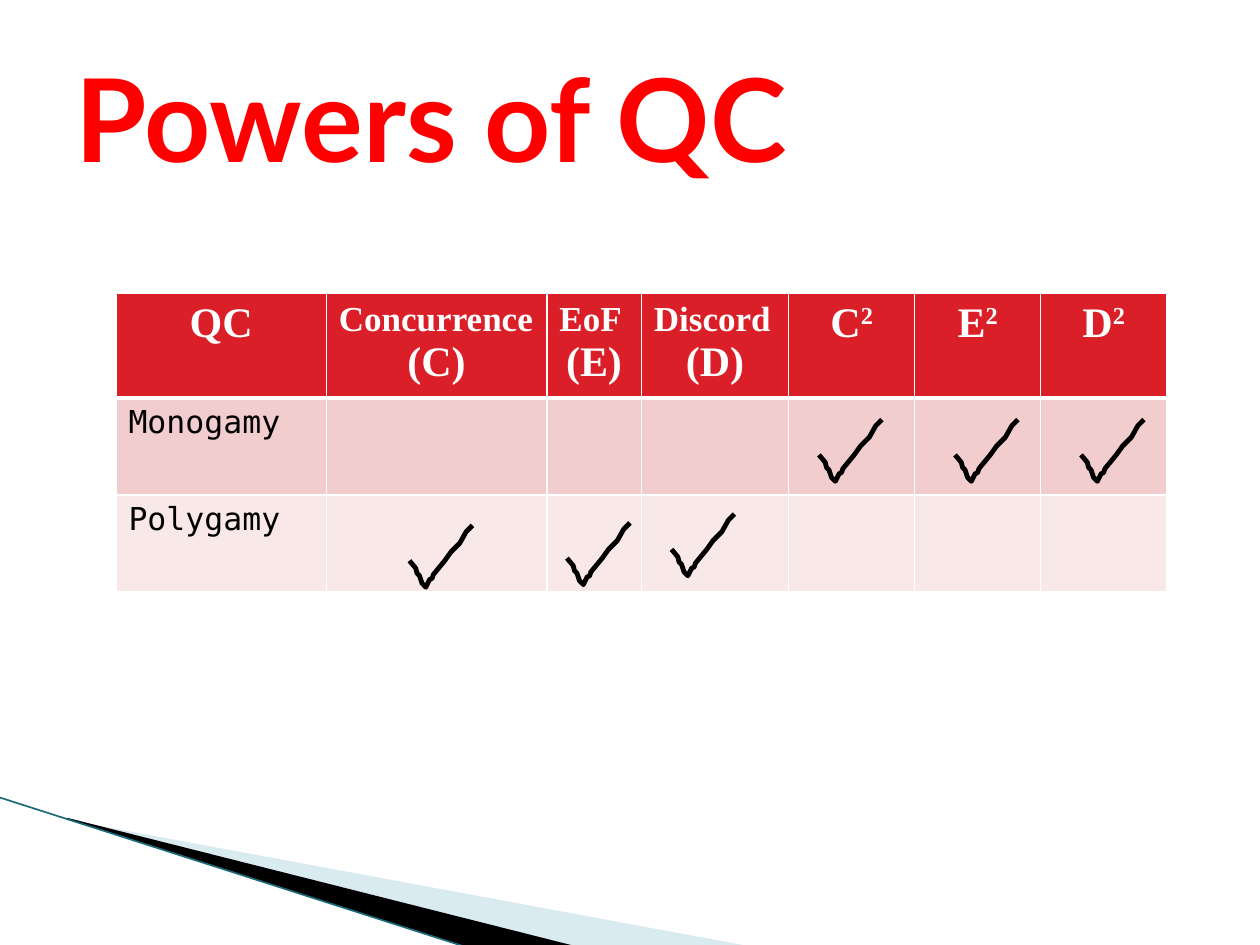
from typing import NamedTuple

from lxml.etree import SubElement
from pptx import Presentation
from pptx.dml.color import RGBColor
from pptx.enum.shapes import MSO_CONNECTOR
from pptx.enum.text import MSO_ANCHOR, MSO_AUTO_SIZE, PP_ALIGN
from pptx.oxml.ns import qn
from pptx.util import Pt

PX = 9144  # 100 px to the inch
COLORS = {
    "title": "FF0000", "header": "DA1F28", "band1": "F1CDCD", "band2": "F8E8E8",
    "white": "FFFFFF", "black": "000000", "pale": "A0CBDC", "teal": "1B6A7A",
}
SERIF, MONO = "Times New Roman", "DejaVu Sans Mono"


class Wedge(NamedTuple):
    points: list[tuple[int, int]]
    color: str
    alpha: int


class Line(NamedTuple):
    text: str
    size: int = 24
    align: PP_ALIGN = PP_ALIGN.CENTER
    power: str = ""


WEDGES = [
    Wedge([(55, 651), (595, 751), (456, 751), (55, 650)], "pale", 40),
    Wedge([(53, 649), (457, 751), (372, 752), (54, 650)], "black", 100),
]
COLUMNS = [167, 175, 75, 117, 100, 100, 100]
ROWS = [83, 77, 77]
HEADERS = [
    [Line("QC")],
    *([Line(name, 20, PP_ALIGN.LEFT), Line(f"({letter})")]
      for name, letter in [("Concurrence", "C"), ("EoF", "E"), ("Discord", "D")]),
    *([Line(letter, power="2")] for letter in "CED"),
]
PROPERTIES = [("Monogamy", "band1"), ("Polygamy", "band2")]
CHECK = [
    (0, 28), (5, 34), (6, 38), (8, 40), (10, 46), (13, 49), (15, 45), (16, 43),
    (18, 42), (19, 39), (28, 28), (33, 21), (40, 14), (45, 5), (50, 0),
]
CHECK_SPOTS = [(325, 417), (450, 415), (533, 408), (650, 333), (758, 333), (858, 333)]


def rgb(name: str) -> RGBColor:
    return RGBColor.from_string(COLORS[name])


def add_text(p, text: str, *, size: int, font: str, color: str,
             bold: bool = False, raised: bool = False) -> None:
    r = p.add_run()
    r.text = text
    r.font.size, r.font.name, r.font.bold = Pt(size), font, bold
    r.font.color.rgb = rgb(color)
    if raised:
        r.font._element.set("baseline", "30000")


def add_outline(s, points: list[tuple[int, int]], close: bool):
    builder = s.shapes.build_freeform(*points[0], scale=PX)
    builder.add_line_segments(points[1:], close=close)
    sp = builder.convert_to_shape()
    sp.shadow.inherit = False
    return sp


def add_wedge(s, wedge: Wedge) -> None:
    sp = add_outline(s, wedge.points, True)
    sp.fill.solid()
    sp.fill.fore_color.rgb = rgb(wedge.color)
    sp.line.fill.background()
    if wedge.alpha < 100:
        color = sp._element.spPr.find(f".//{qn('a:srgbClr')}")
        SubElement(color, qn("a:alpha"), val=str(wedge.alpha * 1000))


def add_check(s, left: int, top: int) -> None:
    sp = add_outline(s, [(left + x, top + y) for x, y in CHECK], False)
    sp.fill.background()
    sp.line.color.rgb = rgb("black")
    sp.line.width = Pt(2.75)


def add_edge_line(s) -> None:
    cn = s.shapes.add_connector(MSO_CONNECTOR.STRAIGHT, 0, 633 * PX, 371 * PX, 752 * PX)
    cn.line.color.rgb = rgb("teal")
    cn.line.width = Pt(0.95)
    SubElement(cn._element.spPr, qn("a:effectLst"))


def style_cell(cell, fill: str, top: int = 1, bottom: int = 1) -> None:
    """Give the cell white borders (widths in points) and a solid fill."""
    tcPr = cell._tc.get_or_add_tcPr()
    for side, width in [("L", 1), ("R", 1), ("T", top), ("B", bottom)]:
        ln = SubElement(tcPr, qn(f"a:ln{side}"), w=str(Pt(width)))
        SubElement(SubElement(ln, qn("a:solidFill")), qn("a:srgbClr"), val=COLORS["white"])
    cell.fill.solid()
    cell.fill.fore_color.rgb = rgb(fill)


def fill_header(cell, lines: list[Line]) -> None:
    tf = cell.text_frame
    for i, line in enumerate(lines):
        p = tf.add_paragraph() if i else tf.paragraphs[0]
        p.alignment = line.align
        style = dict(size=line.size, font=SERIF, color="white", bold=True)
        add_text(p, line.text, **style)
        if line.power:
            add_text(p, line.power, raised=True, **style)


def add_powers_table(s) -> None:
    table = s.shapes.add_table(len(ROWS), len(COLUMNS), 92 * PX, 233 * PX,
                               sum(COLUMNS) * PX, sum(ROWS) * PX).table
    for column, width in zip(table.columns, COLUMNS):
        column.width = width * PX
    for row, height in zip(table.rows, ROWS):
        row.height = height * PX
    for cell, lines in zip(table.rows[0].cells, HEADERS):
        style_cell(cell, "header", bottom=3)
        fill_header(cell, lines)
    for i, (name, band) in enumerate(PROPERTIES, start=1):
        for cell in table.rows[i].cells:
            style_cell(cell, band, top=3 if i == 1 else 1)
        add_text(table.cell(i, 0).text_frame.paragraphs[0], name,
                 size=18, font=MONO, color="black")


def add_title(s, text: str) -> None:
    title = s.shapes.title
    title.left, title.top, title.width, title.height = (
        v * PX for v in (50, 30, 900, 125))
    tf = title.text_frame
    tf.auto_size = MSO_AUTO_SIZE.NONE
    tf.vertical_anchor = MSO_ANCHOR.MIDDLE
    p = tf.paragraphs[0]
    p.alignment = PP_ALIGN.LEFT
    add_text(p, text, size=66, font="Lato", color="title", bold=True)


def main() -> None:
    prs = Presentation()
    prs.slide_width, prs.slide_height = 1000 * PX, 750 * PX
    s = prs.slides.add_slide(prs.slide_layouts[5])
    for wedge in WEDGES:
        add_wedge(s, wedge)
    add_edge_line(s)
    add_title(s, "Powers of QC")
    add_powers_table(s)
    for left, top in CHECK_SPOTS:
        add_check(s, left, top)
    prs.save("out.pptx")


if __name__ == "__main__":
    main()
